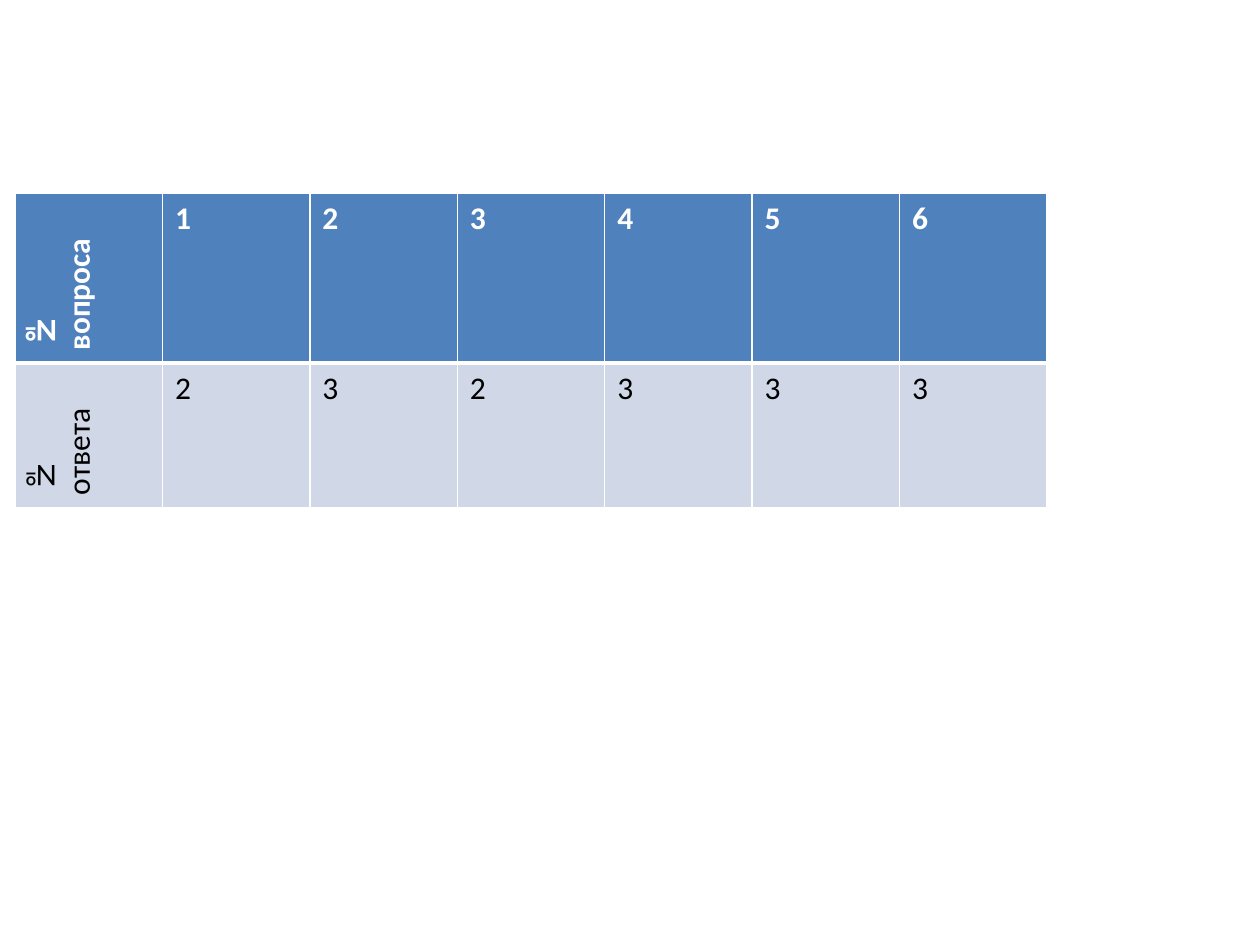
from lxml import etree
from pptx import Presentation
from pptx.dml.color import RGBColor
from pptx.oxml.ns import qn
from pptx.util import Inches, Pt

WIDE, HIGH = 10, 7.5
LEFT, TOP = 0.12, 1.53
COL, ROW = 1.17, 1.07
BLANK = 6
FONT, SIZE = "Calibri", 18
COLORS = {
    "head": "4F81BD",
    "body": "D0D8E8",
    "light": "FFFFFF",
    "dark": "000000",
}
ROWS = [
    ["№ вопроса", "1", "2", "3", "4", "5", "6"],
    ["№ ответа", "2", "3", "2", "3", "3", "3"],
]


def color(name):
    return RGBColor.from_string(COLORS[name])


def add_edge(cell, side, width):
    """Draw one solid border; call before the cell is filled."""
    props = cell._tc.get_or_add_tcPr()
    line = etree.SubElement(props, qn(f"a:{side}"), w=str(Pt(width)))
    fill = etree.SubElement(line, qn("a:solidFill"))
    etree.SubElement(fill, qn("a:srgbClr"), val=COLORS["light"])


def style_cell(cell, text, head, label):
    # The rule between the two rows is thicker than the others
    edges = {"lnL": 1, "lnR": 1, "lnT": 1 if head else 3, "lnB": 3 if head else 1}
    for side, width in edges.items():
        add_edge(cell, side, width)
    cell.fill.solid()
    cell.fill.fore_color.rgb = color("head" if head else "body")
    if label:
        cell._tc.get_or_add_tcPr().set("vert", "vert270")
    run = cell.text_frame.paragraphs[0].add_run()
    run.text = text
    run.font.name = FONT
    run.font.size = Pt(SIZE)
    run.font.bold = head
    run.font.color.rgb = color("light" if head else "dark")


def add_grid(slide, rows):
    count = len(rows[0])
    frame = slide.shapes.add_table(
        len(rows), count, Inches(LEFT), Inches(TOP),
        Inches(COL * count), Inches(ROW * len(rows)))
    table = frame.table
    for col in table.columns:
        col.width = Inches(COL)
    for r, texts in enumerate(rows):
        table.rows[r].height = Inches(ROW)
        for c, text in enumerate(texts):
            style_cell(table.cell(r, c), text, head=r == 0, label=c == 0)


def main():
    deck = Presentation()
    deck.slide_width, deck.slide_height = Inches(WIDE), Inches(HIGH)
    slide = deck.slides.add_slide(deck.slide_layouts[BLANK])
    # Answer key: question numbers over answer numbers
    add_grid(slide, ROWS)
    deck.save("out.pptx")


if __name__ == "__main__":
    main()
